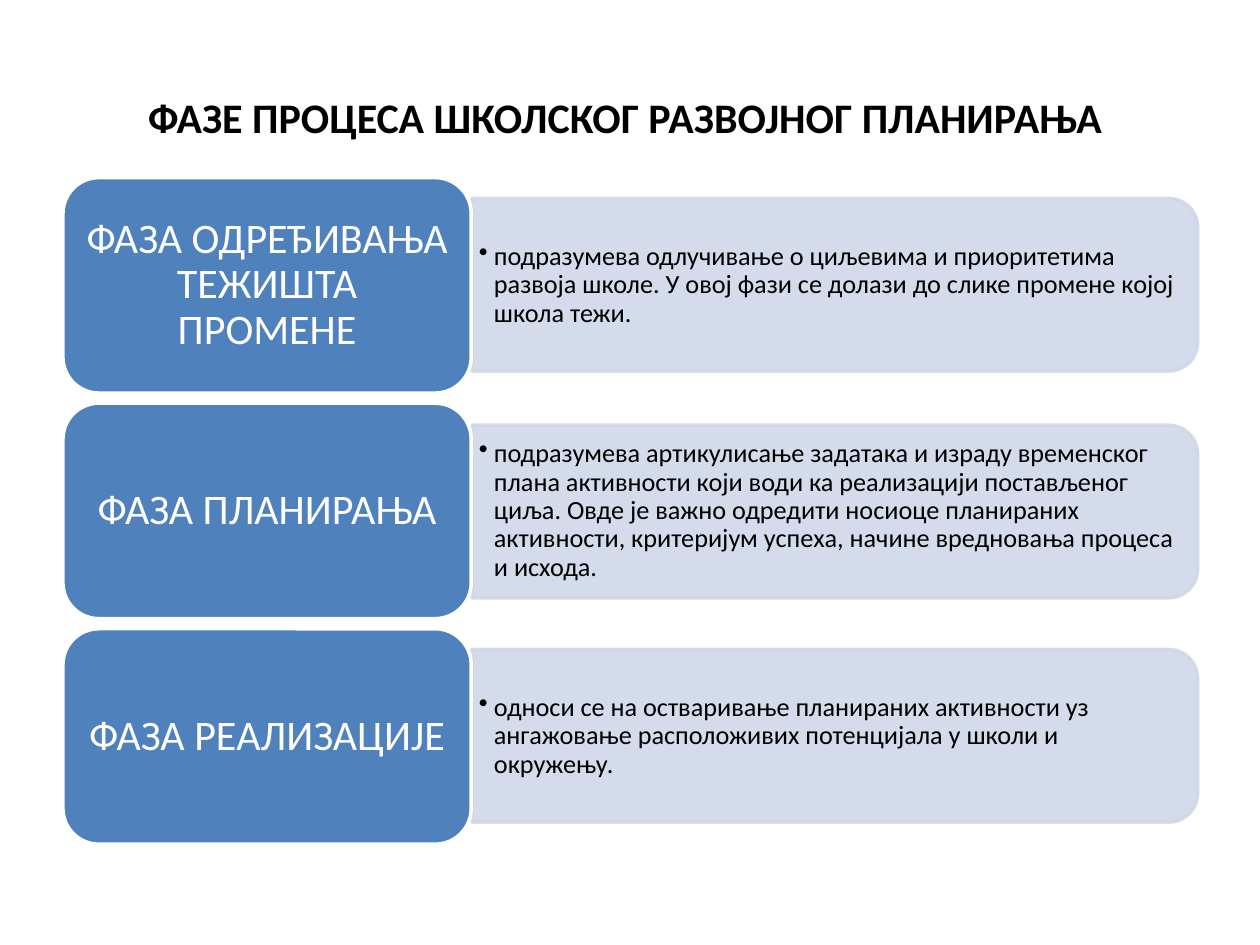
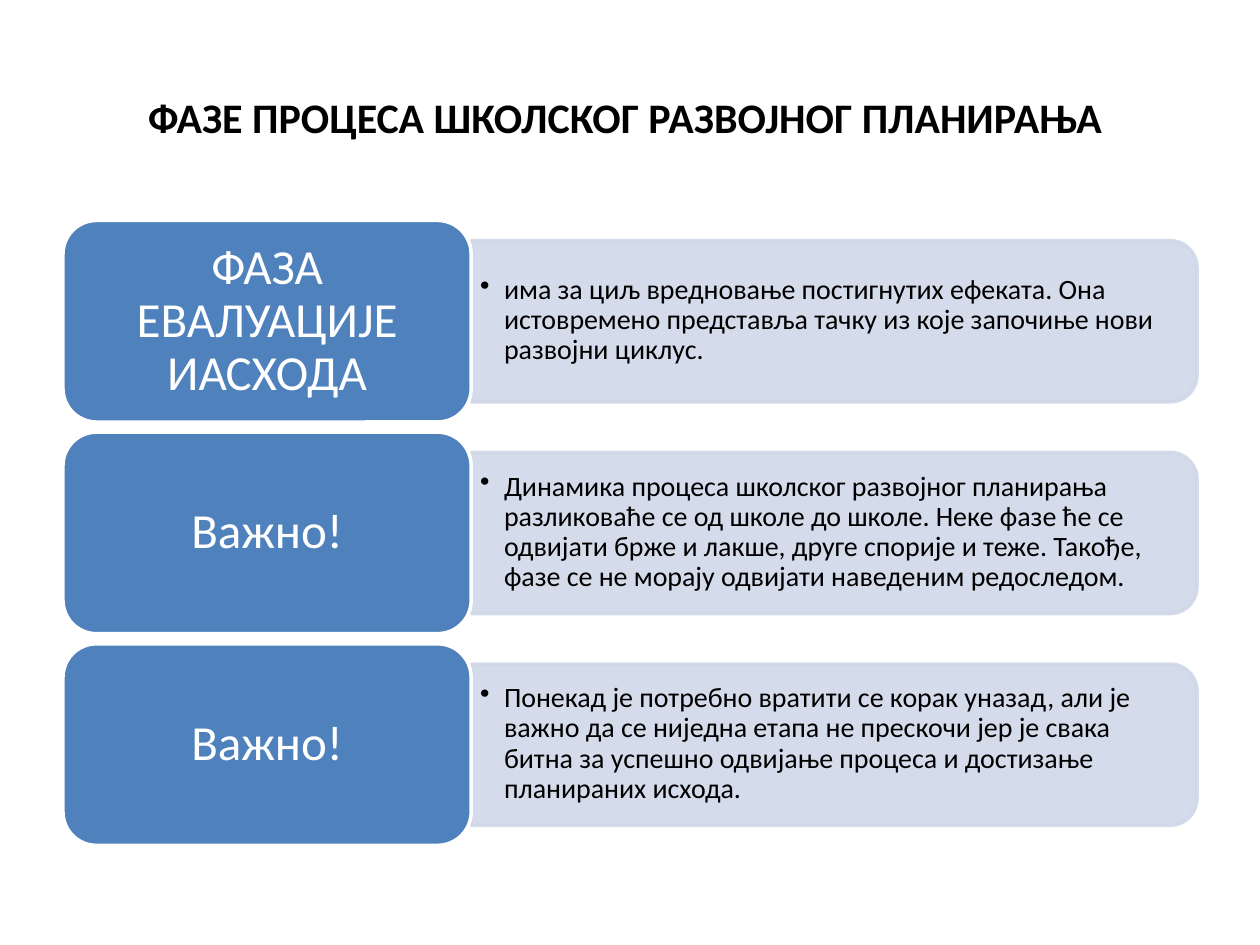
"""Build two slides on the phases of school development planning."""
from dataclasses import dataclass

from lxml.etree import SubElement
from pptx import Presentation
from pptx.dml.color import RGBColor
from pptx.enum.shapes import MSO_SHAPE
from pptx.enum.text import MSO_ANCHOR, PP_ALIGN
from pptx.oxml.ns import qn
from pptx.util import Emu, Pt

EMU_PER_PX = 9144
FONT = "Calibri"
BLACK, WHITE, BLUE, PALE_BLUE = "000000", "FFFFFF", "4F81BD", "D0D8E8"
TITLE = "ФАЗЕ ПРОЦЕСА ШКОЛСКОГ РАЗВОЈНОГ ПЛАНИРАЊА "
TITLE_BOX = (50, 30, 900, 125)
CARD_LEFT, CARD_WIDTH, CARD_GAP = 50, 324, 8
PANEL_LEFT, PANEL_WIDTH = CARD_LEFT + CARD_WIDTH, 576
PANEL_TEXT_WIDTH = 569
PANEL_SHARE, PANEL_TEXT_SHARE = 0.8, 0.72


@dataclass(frozen=True)
class Phase:
    name: str
    description: str


@dataclass(frozen=True)
class PhaseSlide:
    top: int
    card_height: int
    name_size: int
    name_insets: tuple[int, int]
    description_size: int
    description_insets: tuple[int, int]
    bullet_indent: int
    phases: tuple[Phase, ...]


PHASE_SLIDES = (
    PhaseSlide(141, 171, 24, (10, 5), 15, (6, 3), 12, (
        Phase("ФАЗА ОДРЕЂИВАЊА ТЕЖИШТА ПРОМЕНЕ",
              "подразумева одлучивање о циљевима и приоритетима развоја школе. "
              "У овој фази се долази до слике промене којој школа тежи."),
        Phase("ФАЗА ПЛАНИРАЊА",
              "подразумева артикулисање задатака и израду временског плана активности "
              "који води ка реализацији постављеног циља. Овде је важно одредити носиоце "
              "планираних активности, критеријум успеха, начине вредновања процеса и исхода."),
        Phase("ФАЗА РЕАЛИЗАЦИЈЕ",
              "односи се на остваривање планираних активности уз ангажовање "
              "расположивих потенцијала у школи и окружењу."),
    )),
    PhaseSlide(175, 160, 28, (12, 6), 16, (7, 3), 19, (
        Phase("ФАЗА ЕВАЛУАЦИЈЕ ИАСХОДА",
              "има за циљ вредновање постигнутих ефеката. Она истовремено представља "
              "тачку из које започиње нови развојни циклус."),
        Phase("Важно!",
              "Динамика процеса школског развојног планирања разликоваће се од школе до "
              "школе. Неке фазе ће се одвијати брже и лакше, друге спорије и теже. Такође, "
              "фазе се не морају одвијати наведеним редоследом."),
        Phase("Важно!",
              "Понекад је потребно вратити се корак уназад, али је важно да се ниједна "
              "етапа не прескочи јер је свака битна за успешно одвијање процеса и "
              "достизање планираних исхода."),
    )),
)


def px(length: float) -> Emu:
    return Emu(round(length) * EMU_PER_PX)


def color(value: str) -> RGBColor:
    return RGBColor.from_string(value)


def place(shape, left: float, top: float, width: float, height: float) -> None:
    shape.left, shape.top = px(left), px(top)
    shape.width, shape.height = px(width), px(height)


def write(shape, text: str, *, size: int, font_color: str = BLACK, bold: bool = False,
          align=PP_ALIGN.CENTER, insets: tuple[int, int] = (10, 5),
          line_spacing: float = 1.0, bullet_indent: int = 0) -> None:
    frame = shape.text_frame
    frame.word_wrap = True
    frame.vertical_anchor = MSO_ANCHOR.MIDDLE
    frame.margin_left = frame.margin_right = px(insets[0])
    frame.margin_top = frame.margin_bottom = px(insets[1])
    paragraph = frame.paragraphs[0]
    paragraph.alignment = align
    paragraph.line_spacing = line_spacing
    run = paragraph.add_run()
    run.text = text
    run.font.name, run.font.size, run.font.bold = FONT, Pt(size), bold
    run.font.color.rgb = color(font_color)
    if bullet_indent:
        properties = paragraph._p.get_or_add_pPr()
        properties.set("marL", str(px(bullet_indent)))
        properties.set("indent", str(-px(bullet_indent)))
        SubElement(properties, qn("a:buChar")).set("char", "•")


def add_box(slide, preset, box: tuple[float, float, float, float],
            fill_color: str, line_color: str, opacity: int = 100):
    shape = slide.shapes.add_shape(preset, *map(px, box))
    shape.shadow.inherit = False
    shape.fill.solid()
    shape.fill.fore_color.rgb = color(fill_color)
    shape.line.color.rgb = color(line_color)
    shape.line.width = Pt(2)
    if opacity < 100:
        for solid_color in shape._element.spPr.iter(qn("a:srgbClr")):
            SubElement(solid_color, qn("a:alpha")).set("val", str(opacity * 1000))
    return shape


def add_phase(slide, layout: PhaseSlide, phase: Phase, top: int) -> None:
    center = top + layout.card_height / 2
    thickness = layout.card_height * PANEL_SHARE
    panel_box = (PANEL_LEFT + (PANEL_WIDTH - thickness) / 2, center - PANEL_WIDTH / 2,
                 thickness, PANEL_WIDTH)
    panel = add_box(slide, MSO_SHAPE.ROUND_2_SAME_RECTANGLE, panel_box,
                    PALE_BLUE, PALE_BLUE, opacity=90)
    panel.rotation = 90

    text_height = layout.card_height * PANEL_TEXT_SHARE
    description = slide.shapes.add_textbox(
        px(PANEL_LEFT), px(center - text_height / 2), px(PANEL_TEXT_WIDTH), px(text_height))
    write(description, phase.description, size=layout.description_size,
          align=PP_ALIGN.LEFT, insets=layout.description_insets, line_spacing=0.9,
          bullet_indent=layout.bullet_indent)

    card = add_box(slide, MSO_SHAPE.ROUNDED_RECTANGLE,
                   (CARD_LEFT, top, CARD_WIDTH, layout.card_height), BLUE, WHITE)
    write(card, phase.name, size=layout.name_size, font_color=WHITE,
          insets=layout.name_insets, line_spacing=0.9)


def add_phase_slide(presentation, layout: PhaseSlide) -> None:
    slide = presentation.slides.add_slide(presentation.slide_layouts.get_by_name("Title Only"))
    place(slide.shapes.title, *TITLE_BOX)
    write(slide.shapes.title, TITLE, size=24, bold=True)
    for index, phase in enumerate(layout.phases):
        add_phase(slide, layout, phase, layout.top + index * (layout.card_height + CARD_GAP))


def main() -> None:
    presentation = Presentation()
    presentation.slide_width, presentation.slide_height = px(1000), px(750)
    for layout in PHASE_SLIDES:
        add_phase_slide(presentation, layout)
    presentation.save("out.pptx")


if __name__ == "__main__":
    main()
